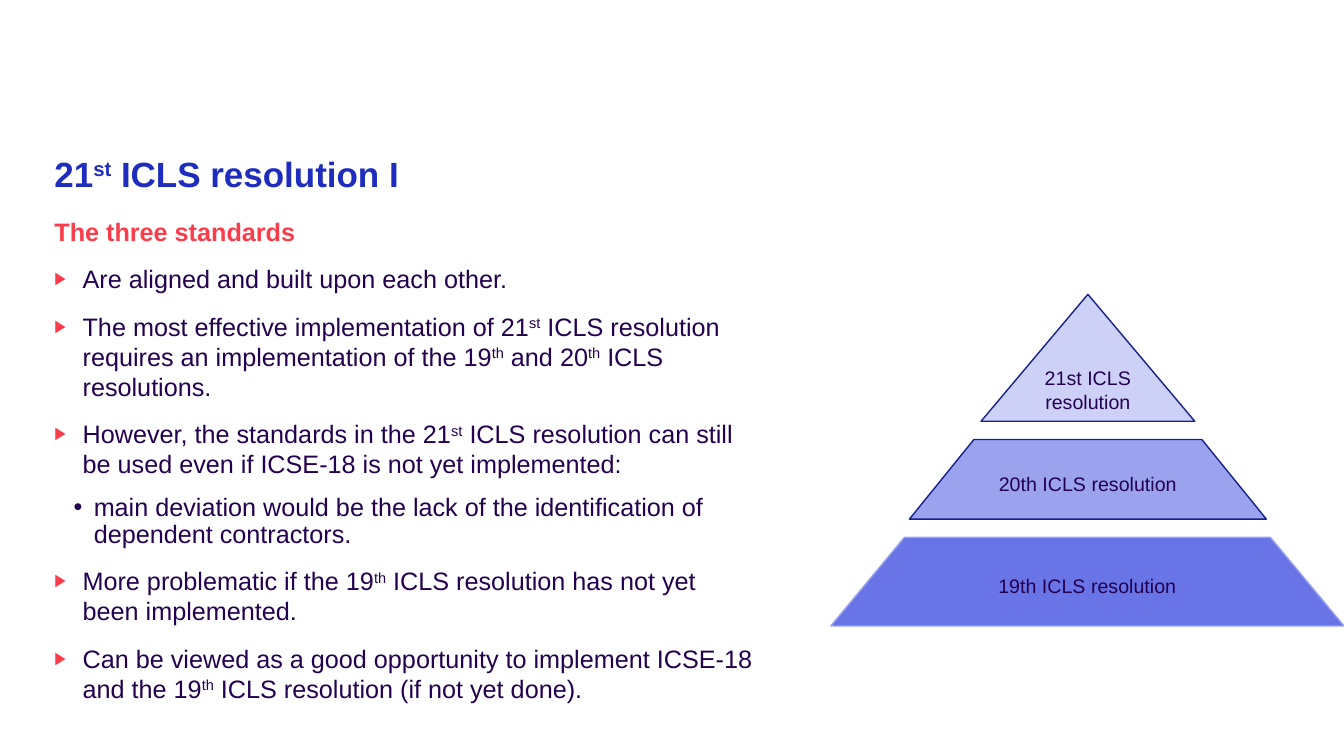
from lxml import etree
from pptx import Presentation
from pptx.dml.color import RGBColor
from pptx.enum import shapes, text
from pptx.oxml.ns import qn
from pptx.util import Inches, Pt

BLUE, RED, INK = "1E2DBE", "FA3C4B", "230050"


def add_runs(p, marked, size, color, bold=False):
    """Add formatted runs to p; every second part between ^ signs is superscript."""
    for i, part in enumerate(marked.split("^")):
        r = p.add_run()
        r.text = part
        r.font.name, r.font.size, r.font.bold = "Arial", Pt(size), bold
        r.font.color.rgb = RGBColor.from_string(color)
        if i % 2:
            r.font._element.set("baseline", "30000")


def add_bullet(p, char, margin, hanging, color=None, percent=100):
    pPr = p._p.get_or_add_pPr()
    pPr.set("marL", str(Inches(margin)))
    pPr.set("indent", str(-Inches(hanging)))
    if color:
        clr = etree.SubElement(pPr, qn("a:buClr"))
        etree.SubElement(clr, qn("a:srgbClr")).set("val", color)
    etree.SubElement(pPr, qn("a:buSzPct")).set("val", str(percent * 1000))
    etree.SubElement(pPr, qn("a:buFont")).set("typeface", "Arial")
    etree.SubElement(pPr, qn("a:buChar")).set("char", char)


prs = Presentation()
prs.slide_width, prs.slide_height = Inches(13.33), Inches(7.5)
s = prs.slides.add_slide(prs.slide_layouts[6])

# Title and body boxes
frames = []
for top, width, height in [(1.56, 12.26, 0.5), (2.15, 6.93, 5.08)]:
    tf = s.shapes.add_textbox(Inches(0.54), Inches(top), Inches(width), Inches(height)).text_frame
    tf.word_wrap = True
    tf.margin_left = tf.margin_top = tf.margin_right = tf.margin_bottom = 0
    frames.append(tf)
title, body = frames

title.paragraphs[0].line_spacing = 0.9
add_runs(title.paragraphs[0], "21^st^ ICLS resolution I", 25, BLUE, True)

heading = body.paragraphs[0]
heading.space_after = Pt(6)
add_runs(heading, "The three standards", 18, RED, True)

points = [
    (1, "Are aligned and built upon each other."),
    (1, "The most effective implementation of 21^st^ ICLS resolution requires "
        "an implementation of the 19^th^ and 20^th^ ICLS resolutions."),
    (1, "However, the standards in the 21^st^ ICLS resolution can still be used "
        "even if ICSE-18 is not yet implemented:"),
    (2, "main deviation would be the lack of the identification of dependent contractors."),
    (1, "More problematic if the 19^th^ ICLS resolution has not yet been implemented."),
    (1, "Can be viewed as a good opportunity to implement ICSE-18 and the 19^th^ "
        "ICLS resolution (if not yet done)."),
]
for level, point in points:
    p = body.add_paragraph()
    p.level = level
    p.space_after = Pt(6)
    if level == 1:
        p.space_before = Pt(6)
        add_bullet(p, "▶", 0.28, 0.28, RED, 70)
    else:
        p.space_before = Pt(5)
        p.line_spacing = 0.9
        add_bullet(p, "•", 0.39, 0.2)
    add_runs(p, point, 18, INK)

# Pyramid of the three standards
TRIANGLE, TRAPEZOID = shapes.MSO_SHAPE.ISOSCELES_TRIANGLE, shapes.MSO_SHAPE.TRAPEZOID
tiers = [
    ("21st ICLS resolution", TRIANGLE, None, 9.73, 2.92, 2.12, 1.26, "CDD1F7", "16218D"),
    ("20th ICLS resolution", TRAPEZOID, 0.81, 9.02, 4.36, 3.54, 0.79, "9BA3EF", "16218D"),
    ("19th ICLS resolution", TRAPEZOID, 0.83, 8.24, 5.33, 5.09, 0.88, "6975E7", "9BA3EF"),
]
for label, kind, slope, left, top, width, height, fill, line in tiers:
    sp = s.shapes.add_shape(kind, Inches(left), Inches(top), Inches(width), Inches(height))
    sp.shadow.inherit = False
    if slope:
        sp.adjustments[0] = slope
    sp.fill.solid()
    sp.fill.fore_color.rgb = RGBColor.from_string(fill)
    sp.line.color.rgb = RGBColor.from_string(line)
    sp.line.width = Pt(1)
    tf = sp.text_frame
    tf.word_wrap = True
    tf.vertical_anchor = text.MSO_ANCHOR.MIDDLE
    tf.paragraphs[0].alignment = text.PP_ALIGN.CENTER
    add_runs(tf.paragraphs[0], label, 14, INK)

prs.save("out.pptx")
